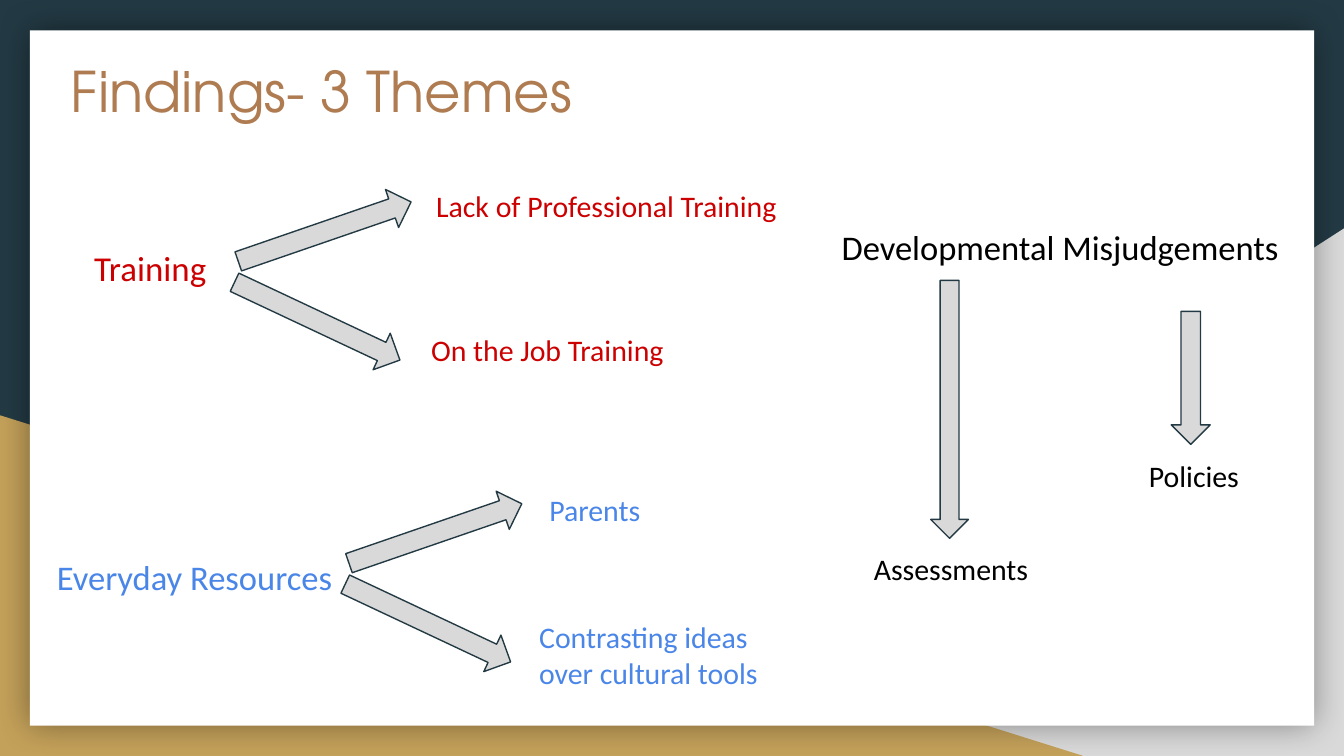
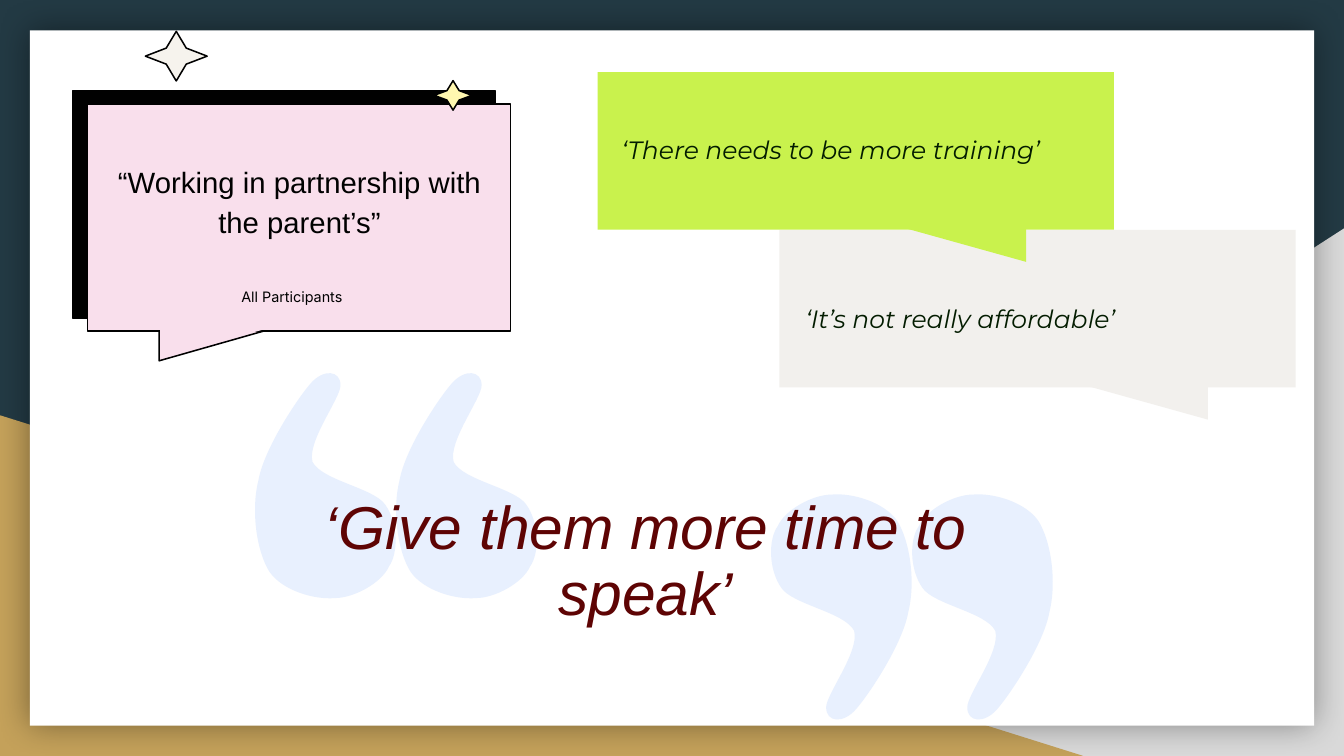
from lxml import etree
from pptx import Presentation
from pptx import util as u
from pptx.dml.color import RGBColor
from pptx.enum import shapes, text
from pptx.oxml import ns

NAVY, GOLD, GREY, WHITE = "233A44", "C4A15A", "D9D9D9", "FFFFFF"
BROWN, RED, BLUE, BLACK = "AF7B51", "CC0000", "4A86E8", "000000"
LIME, CREAM, PINK, INK = "C9F24D", "F2F0ED", "F9DFEC", "010101"
PALE_BLUE, MAROON, GREEN = "E8F0FE", "5E0404", "031C00"

SHAPE = shapes.MSO_SHAPE
MIDDLE = text.MSO_ANCHOR.MIDDLE
CENTER = text.PP_ALIGN.CENTER
INSETS = (7.2, 7.2, 7.2, 7.2)
SMALL_INSETS = (4.3, 4.3, 4.3, 4.3)
BUBBLE_INSETS = (5.8, 12.2, 5.8, 12.2)

HEADING = dict(name="Calibri", size=18.5)
ITEM = dict(name="Calibri", size=16)
BUBBLE = dict(name="Montserrat", size=13.4, color=GREEN, italic=True)

# Closing quotation mark in points: start, then two controls and an end per curve
MARK_START = (33, 0)
MARK_CURVES = [
    (44, -1), (61, 4), (68, 14), (75, 25), (78, 47), (74, 63),
    (71, 80), (53, 107), (46, 115), (39, 123), (30, 122), (30, 114),
    (30, 107), (48, 84), (45, 73), (40, 63), (12, 59), (6, 50),
    (-1, 40), (-1, 24), (4, 17), (8, 8), (23, 0), (33, 0),
]
MARK_PITCH = 75.6


def rgb(color):
    return RGBColor.from_string(color)


def pts(values):
    return [u.Pt(v) for v in values]


def set_attrs(obj, values):
    for name, value in values.items():
        setattr(obj, name, value)


def paint(sp, fill, line=None, width=0.75):
    sp.shadow.inherit = False
    sp.fill.solid()
    sp.fill.fore_color.rgb = rgb(fill)
    if line:
        sp.line.color.rgb = rgb(line)
        sp.line.width = u.Pt(width)
    else:
        sp.line.fill.background()


def add_box(parent, kind, box, fill, line=None, width=0.75, rotation=0,
            flip=False, adj=None):
    sp = parent.add_shape(kind, *pts(box))
    paint(sp, fill, line, width)
    sp.rotation = rotation
    if flip:
        sp.element.spPr.xfrm.set("flipH", "1")
    if adj is not None:
        sp.adjustments[0] = adj
    return sp


def write(sp, words, font, color=None, anchor=text.MSO_ANCHOR.TOP,
          align=text.PP_ALIGN.LEFT, spacing=1.0, insets=INSETS):
    tf = sp.text_frame
    left, top, right, bottom = pts(insets)
    set_attrs(tf, dict(
        word_wrap=True, auto_size=text.MSO_AUTO_SIZE.NONE, vertical_anchor=anchor,
        margin_left=left, margin_top=top, margin_right=right, margin_bottom=bottom))
    p = tf.paragraphs[0]
    set_attrs(p, dict(alignment=align, line_spacing=spacing, space_before=u.Pt(0)))
    r = p.add_run()
    r.text = words
    values = dict(font, size=u.Pt(font["size"]))
    r.font.color.rgb = rgb(color or values.pop("color"))
    set_attrs(r.font, values)
    return p


def add_label(parent, box, words, font, color=None, **layout):
    write(parent.add_textbox(*pts(box)), words, font, color, **layout)


def fill_placeholder(ph, box, words, font, color, **layout):
    ph.left, ph.top, ph.width, ph.height = pts(box)
    return write(ph, words, font, color, **layout)


def add_glow(sp, blur, alpha):
    """Soft dark shadow on all sides."""
    effects = sp.element.spPr.find(ns.qn("a:effectLst"))
    shadow = etree.SubElement(effects, ns.qn("a:outerShdw"), blurRad=str(u.Pt(blur)),
                              dist="0", dir="0", algn="ctr", rotWithShape="0")
    color = etree.SubElement(shadow, ns.qn("a:srgbClr"), val=BLACK)
    etree.SubElement(color, ns.qn("a:alpha"), val=str(alpha * 1000))


def decorate_master(prs, slide):
    """Build the backdrop on a slide, then move it behind everything on the master."""
    master = prs.slide_master
    master.background.fill.solid()
    master.background.fill.fore_color.rgb = rgb(NAVY)
    corner, sh = SHAPE.RIGHT_TRIANGLE, slide.shapes
    backdrop = [
        add_box(sh, corner, (282.2, 122.4, 437.8, 282.6), GREY, flip=True),
        add_box(sh, corner, (0, 222.5, 580.3, 182.5), GOLD),
        add_box(sh, SHAPE.RECTANGLE, (16, 16.2, 688, 372.5), WHITE),
    ]
    add_glow(backdrop[-1], 18, 40)
    for i, sp in enumerate(backdrop):
        sp.element.nvSpPr.cNvPr.set("id", str(100 + i))
        master.element.cSld.spTree.insert(2 + i, sp.element)


def add_arrow(parent, box, rotation):
    add_box(parent, SHAPE.RIGHT_ARROW, box, GREY, NAVY, rotation=rotation)


def add_fork(parent, x, y):
    """Two arrows spreading up and down to the right."""
    for dx, dy, angle in ((0, 0, 341), (-4, 48, 25.2)):
        add_arrow(parent, (x + dx, y + dy, 97.9, 21.6), angle)


def add_mark(parent, x, y, rotation):
    fb = parent.build_freeform(*MARK_START, scale=u.Pt(1))
    fb.add_line_segments(MARK_CURVES, close=True)
    sp = fb.convert_to_shape(u.Pt(x), u.Pt(y))
    lines = list(sp.element.iter(ns.qn("a:lnTo")))
    for i in range(0, len(MARK_CURVES), 3):
        curve = etree.Element(ns.qn("a:cubicBezTo"))
        lines[i].addprevious(curve)
        for line in lines[i:i + 3]:
            curve.append(line[0])
            line.getparent().remove(line)
    paint(sp, PALE_BLUE)
    sp.rotation = rotation


def add_panel(parent, box, fill, line=None):
    add_box(parent, SHAPE.ROUNDED_RECTANGLE, box, fill, line, 0.83, adj=0)


def add_tail(parent, box, fill, line=None, flip=False):
    add_box(parent, SHAPE.RIGHT_TRIANGLE, box, fill, line, 0.83, 180, flip)


def add_star(parent, box, fill):
    add_box(parent, SHAPE.STAR_4_POINT, box, fill, INK, 0.83, adj=0.229)


def build_themes(slide):
    sh = slide.shapes
    title, body = slide.placeholders
    fill_placeholder(title, (30.8, 23, 591, 75), "Findings- 3 Themes",
                     dict(name="TeX Gyre Adventor", size=30), BROWN)
    p = fill_placeholder(body, (43.2, 126.7, 77.8, 46), "Training",
                         dict(HEADING, size=18.7), RED, spacing=0.95)
    pPr = p._p.get_or_add_pPr()
    pPr.set("marL", "0")
    pPr.set("indent", "0")
    etree.SubElement(pPr, ns.qn("a:buNone"))

    add_fork(sh, 125, 113.3)
    add_fork(sh, 184.3, 275)
    add_arrow(sh, (602.2, 192, 71.3, 20.9), 90)
    add_arrow(sh, (439.6, 209.2, 138.2, 20.2), 90)

    for x, y, w, words, color in (
            (23.4, 287.3, 183.6, "Everyday Resources", BLUE),
            (443.8, 110.5, 290.9, "Developmental Misjudgements", BLACK)):
        add_label(sh, (x, y, w, 36.7), words, HEADING, color, spacing=1.15)
    for x, y, w, h, words, color in (
            (226.6, 93.3, 208, 36.7, "Lack of Professional Training", RED),
            (223.9, 170.6, 156.2, 36.7, "On the Job Training", RED),
            (287.3, 256.3, 156.2, 28.8, "Parents", BLUE),
            (281.8, 324.3, 156.2, 28.8, "Contrasting ideas over cultural tools", BLUE),
            (461.1, 287.7, 156.2, 36.7, "Assessments", BLACK),
            (608.4, 238, 107.3, 46, "Policies", BLACK)):
        add_label(sh, (x, y, w, h), words, ITEM, color)


def build_main_quote(parent):
    for x, y, rotation in ((135.4, 198.4, 180), (412.6, 265, 0)):
        for i in range(2):
            add_mark(parent, x + i * MARK_PITCH, y, rotation)
    add_label(parent, (154.8, 228.8, 391, 145.4), "‘Give them more time to speak’",
              dict(name="Arial", size=32.4, italic=True), MAROON, anchor=MIDDLE,
              align=CENTER, spacing=0.9, insets=(0, 0, 8.6, 0))


def build_training_bubbles(parent):
    for x, y, fill in ((417.6, 123.2, CREAM), (320.2, 38.7, LIME)):
        add_panel(parent, (x, y, 276.5, 84.3), fill)
        add_tail(parent, (x + 164.9, y + 83.6, 64.6, 18), fill)
    for box, words, spacing in (
            ((327.2, 47.2, 260, 68.4), "‘There needs to be more training’", 0.85),
            ((425.8, 140.4, 260, 58.3), "‘It’s not really affordable’", 1.15)):
        add_label(parent, box, words, BUBBLE, anchor=MIDDLE, spacing=spacing,
                  insets=BUBBLE_INSETS)


def build_partnership_card(parent):
    add_panel(parent, (38.8, 48.7, 226.6, 121.7), INK, INK)
    add_star(parent, (77.9, 16.8, 33.1, 26.6), "F6F3ED")
    add_tail(parent, (85.2, 177.3, 56.2, 16), PINK, BLACK, flip=True)
    add_panel(parent, (47, 55.6, 226.6, 121.7), PINK, INK)
    add_star(parent, (232.6, 43.2, 20.2, 15.8), "FFF7B0")
    add_label(parent, (50, 56.9, 221, 99.4),
              "“Working in partnership with the parent’s”",
              dict(name="Arial", size=15.7), INK, anchor=MIDDLE, align=CENTER,
              spacing=1.15, insets=SMALL_INSETS)
    add_tail(parent, (85.7, 175.7, 58.3, 16.6), PINK, flip=True)
    add_label(parent, (74.2, 150.1, 164.2, 17.3), "All Participants",
              dict(name="Inter", size=7.7), INK, align=CENTER, insets=SMALL_INSETS)


def main():
    prs = Presentation()
    prs.slide_width, prs.slide_height = pts((720, 405))
    themes = prs.slides.add_slide(prs.slide_layouts[1])
    decorate_master(prs, themes)
    build_themes(themes)
    quotes = prs.slides.add_slide(prs.slide_layouts[6])
    for build in (build_main_quote, build_training_bubbles, build_partnership_card):
        build(quotes.shapes.add_group_shape().shapes)
    prs.save("out.pptx")


if __name__ == "__main__":
    main()
